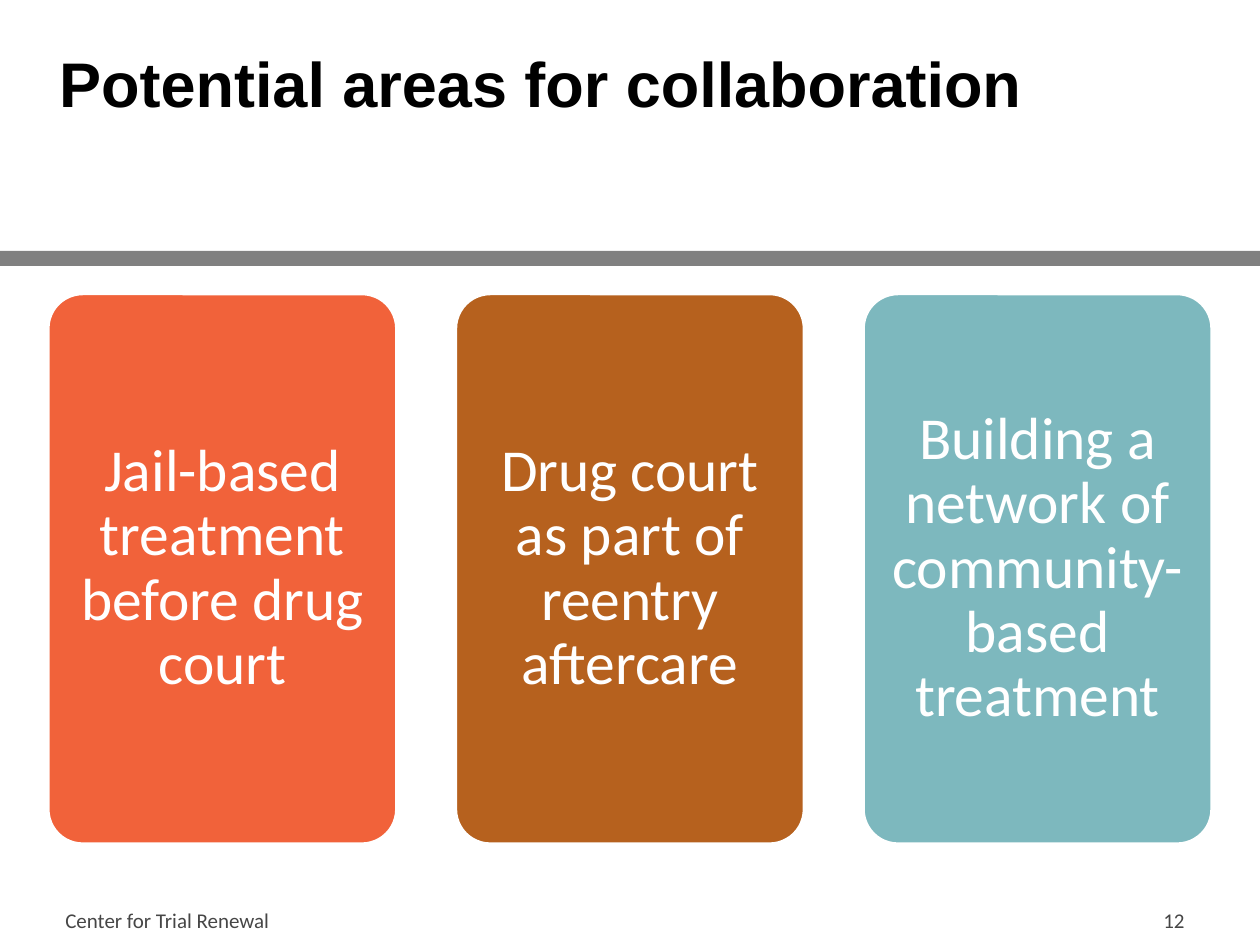
from dataclasses import dataclass

from pptx import Presentation
from pptx.dml.color import RGBColor
from pptx.enum.shapes import MSO_SHAPE
from pptx.enum.text import MSO_ANCHOR, PP_ALIGN
from pptx.util import Inches, Pt

RECTANGLE, ROUNDED = MSO_SHAPE.RECTANGLE, MSO_SHAPE.ROUNDED_RECTANGLE
TOP, MIDDLE = MSO_ANCHOR.TOP, MSO_ANCHOR.MIDDLE
LEFT, CENTER, RIGHT = PP_ALIGN.LEFT, PP_ALIGN.CENTER, PP_ALIGN.RIGHT

TITLE = "Potential areas for collaboration"
AREAS = [
    ("Jail-based treatment before drug court", "F1623A"),
    ("Drug court as part of reentry aftercare", "B6611E"),
    ("Building a network of community-based treatment", "7DB8BE"),
]
FOOTER = [
    ("Center for Trial Renewal", 0.42, 3.17, LEFT),
    ("12", 7.17, 2.33, RIGHT),
]


@dataclass(frozen=True)
class Theme:
    heading_font: str = "Arial"
    body_font: str = "Calibri"
    heading_size: int = 36
    card_size: int = 34
    footer_size: int = 12
    heading: str = "000000"
    on_card: str = "FFFFFF"
    footer: str = "464646"
    rule: str = "808080"


THEME = Theme()
WIDTH, HEIGHT = 10, 7.5
MARGIN = 0.38
CARD_TOP, CARD_WIDTH, CARD_HEIGHT = 2.33, 2.77, 4.37
CARD_INSET = 0.14
CARD_GAP = (WIDTH - 2 * MARGIN - len(AREAS) * CARD_WIDTH) / (len(AREAS) - 1)


def box(left, top, width, height):
    return [Inches(length) for length in (left, top, width, height)]


def write(frame, text, font, size, color, align, anchor, bold=False):
    frame.word_wrap = True
    frame.vertical_anchor = anchor
    paragraph = frame.paragraphs[0]
    paragraph.alignment = align
    run = paragraph.add_run()
    run.text = text
    run.font.name = font
    run.font.size = Pt(size)
    run.font.bold = bold
    run.font.color.rgb = RGBColor.from_string(color)
    return paragraph


def add_block(slide, preset, bounds, color):
    block = slide.shapes.add_shape(preset, *bounds)
    block.shadow.inherit = False
    block.fill.solid()
    block.fill.fore_color.rgb = RGBColor.from_string(color)
    block.line.fill.background()
    return block


def add_card(slide, column, text, color):
    left = MARGIN + column * (CARD_WIDTH + CARD_GAP)
    card = add_block(slide, ROUNDED, box(left, CARD_TOP, CARD_WIDTH, CARD_HEIGHT), color)
    card.adjustments[0] = 0.1
    card.line.color.rgb = RGBColor.from_string(THEME.on_card)
    card.line.width = Pt(2)
    frame = card.text_frame
    frame.margin_left = frame.margin_right = Inches(CARD_INSET)
    frame.margin_top = frame.margin_bottom = Inches(CARD_INSET)
    paragraph = write(frame, text, THEME.body_font, THEME.card_size,
                      THEME.on_card, CENTER, MIDDLE)
    paragraph.line_spacing = 0.9


def main():
    deck = Presentation()
    deck.slide_width, deck.slide_height = Inches(WIDTH), Inches(HEIGHT)
    slide = deck.slides.add_slide(deck.slide_layouts[5])

    add_block(slide, RECTANGLE, box(0, 1.99, WIDTH, 0.12), THEME.rule)

    title = slide.shapes.title
    title.left, title.top, title.width, title.height = box(0.37, 0.3, 9.26, 1.45)
    write(title.text_frame, TITLE, THEME.heading_font, THEME.heading_size,
          THEME.heading, LEFT, TOP, bold=True)

    for column, (text, color) in enumerate(AREAS):
        add_card(slide, column, text, color)

    for text, left, width, align in FOOTER:
        note = slide.shapes.add_textbox(*box(left, 7.1, width, 0.4))
        write(note.text_frame, text, THEME.body_font, THEME.footer_size,
              THEME.footer, align, MIDDLE)

    deck.save("out.pptx")


if __name__ == "__main__":
    main()
